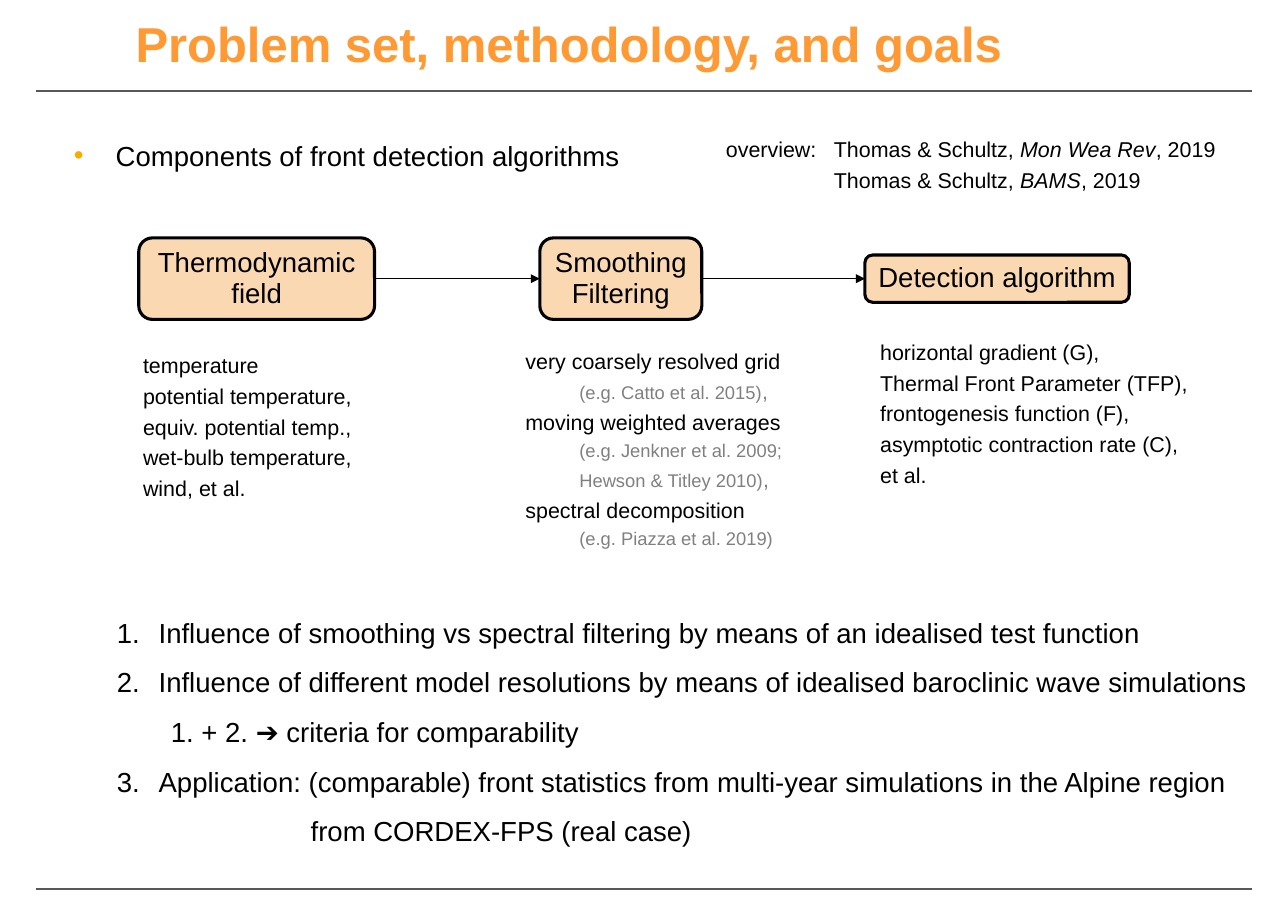
from lxml.etree import SubElement
from pptx import Presentation
from pptx.dml.color import RGBColor
from pptx.enum.shapes import MSO_CONNECTOR, MSO_SHAPE
from pptx.enum.text import MSO_ANCHOR, MSO_AUTO_SIZE, PP_ALIGN
from pptx.oxml.ns import qn
from pptx.util import Inches, Pt

WIDTH, HEIGHT = 11.69, 8.27
AXIS = 2.53  # height of the flow arrows
TAB = 0.49
INK, ORANGE, GREY, RULE = "000000", "FF9933", "808080", "58585A"

TITLE = "Problem set, methodology, and goals"
# Each line is (layout of the line, run, run, ...); a run is text or (text, look).
TOPIC = [("bullet", "Components of front detection algorithms")]
OVERVIEW = [
    ("label", "overview:\tThomas & Schultz, ", ("Mon Wea Rev", "italic"), ", 2019"),
    ("under label", "Thomas & Schultz, ", ("BAMS", "italic"), ", 2019"),
]
STEPS = [  # text, left, width, height
    ("Thermodynamic\vfield", 1.26, 2.14, 0.74),
    ("Smoothing\vFiltering", 4.9, 1.47, 0.74),
    ("Detection algorithm", 7.85, 2.4, 0.43),
]
FIELDS = [
    ("plain", "temperature"),
    ("plain", "potential temperature,"),
    ("plain", "equiv. potential temp.,"),
    ("plain", "wet-bulb temperature,"),
    ("plain", "wind, et al."),
]
FILTERS = [
    ("plain", "very coarsely resolved grid"),
    ("tabbed", ("(e.g. Catto et al. 2015)", "source"), (",", "grey")),
    ("plain", "moving weighted averages"),
    ("tabbed", ("(e.g. Jenkner et al. 2009;", "source")),
    ("tabbed", ("Hewson & Titley 2010)", "source"), (",", "grey")),
    ("plain", "spectral decomposition"),
    ("tabbed", ("(e.g. Piazza et al. 2019)", "source")),
]
DETECTORS = [
    ("plain", "horizontal gradient (G),"),
    ("plain", "Thermal Front Parameter (TFP),"),
    ("plain", "frontogenesis function (F),"),
    ("plain", "asymptotic contraction rate (C),"),
    ("plain", "et al."),
]
GOALS = [
    ("number", "Influence of smoothing vs spectral filtering by means of an idealised test function"),
    ("number", "Influence of different model resolutions by means of idealised baroclinic wave simulations"),
    ("tabbed", "1. + 2. ➔ criteria for comparability"),
    ("number 3", "Application: (comparable) front statistics from multi-year simulations in the Alpine region"),
    ("continued", "from CORDEX-FPS (real case)"),
]
NOTES = [  # lines, left, top, width, height
    (OVERVIEW, 6.49, 1.14, 4.9, 0.64),
    (FIELDS, 1.2, 3.1, 2.4, 1.49),
    (FILTERS, 4.67, 3.06, 2.8, 2.01),
    (DETECTORS, 7.89, 2.98, 3.3, 1.49),
]

# Left margin, first-line indent, marker tag, marker attributes, marker colour
LINE_LAYOUTS = {
    "plain": (0, 0, "a:buNone", {}, None),
    "tabbed": (TAB, 0, "a:buNone", {}, None),
    "label": (2 * TAB, -2 * TAB, "a:buNone", {}, None),
    "under label": (2 * TAB, 0, "a:buNone", {}, None),
    "continued": (1.76, 0, "a:buNone", {}, None),
    "bullet": (0.38, -0.38, "a:buChar", {"char": "•"}, "FAAB00"),
    "number": (0.38, -0.38, "a:buAutoNum", {"type": "arabicPeriod"}, INK),
    "number 3": (0.38, -0.38, "a:buAutoNum", {"type": "arabicPeriod", "startAt": "3"}, INK),
}


def color(hex_code):
    return RGBColor.from_string(hex_code)


def style(font, size, hex_code=INK, bold=False, italic=False):
    font.name, font.size, font.bold, font.italic = "Arial", Pt(size), bold, italic
    font.color.rgb = color(hex_code)


def place(shape, left, top, width, height):
    shape.left, shape.top = Inches(left), Inches(top)
    shape.width, shape.height = Inches(width), Inches(height)


def indent(paragraph, line_layout):
    margin, first, tag, attributes, marker_color = LINE_LAYOUTS[line_layout]
    properties = paragraph._p.get_or_add_pPr()
    properties.set("marL", str(Inches(margin)))
    properties.set("indent", str(Inches(first)))
    if marker_color:
        SubElement(SubElement(properties, qn("a:buClr")), qn("a:srgbClr"), val=marker_color)
        SubElement(properties, qn("a:buFont"), typeface="Arial")
    SubElement(properties, qn(tag), attributes)


def write(frame, lines, size, spacing):
    frame.word_wrap = True
    frame.auto_size = MSO_AUTO_SIZE.NONE
    frame.vertical_anchor = MSO_ANCHOR.TOP
    for number, (line_layout, *parts) in enumerate(lines):
        paragraph = frame.add_paragraph() if number else frame.paragraphs[0]
        paragraph.line_spacing = spacing
        paragraph.space_before = Pt(0)
        indent(paragraph, line_layout)
        for part in parts:
            text, look = (part, "") if isinstance(part, str) else part
            run = paragraph.add_run()
            run.text = text
            style(run.font, 12 if look == "source" else size,
                  GREY if look in ("source", "grey") else INK, italic=look == "italic")


def add_line(shapes, start, end, hex_code, points):
    line = shapes.add_connector(MSO_CONNECTOR.STRAIGHT, *map(Inches, start + end))
    line.line.color.rgb = color(hex_code)
    line.line.width = Pt(points)
    SubElement(line._element.spPr, qn("a:effectLst"))
    return line


def add_step(shapes, text, left, width, height):
    step = shapes.add_shape(MSO_SHAPE.ROUNDED_RECTANGLE, Inches(left),
                            Inches(AXIS - height / 2), Inches(width), Inches(height))
    step.shadow.inherit = False
    step.fill.solid()
    step.fill.fore_color.rgb = color("F08302")
    tint = step._element.spPr.find(qn("a:solidFill")).find(qn("a:srgbClr"))
    SubElement(tint, qn("a:alpha"), val="30000")
    step.line.color.rgb = color(INK)
    step.line.width = Pt(2)
    frame = step.text_frame
    frame.text = text
    frame.word_wrap = False
    frame.vertical_anchor = MSO_ANCHOR.MIDDLE
    paragraph = frame.paragraphs[0]
    paragraph.alignment, paragraph.line_spacing = PP_ALIGN.CENTER, 0.93
    for run in paragraph.runs:
        style(run.font, 18)
    return step


def add_arrow(shapes, before, after):
    arrow = add_line(shapes, (0, AXIS), (1, AXIS), INK, 0.75)
    arrow.begin_connect(before, 3)
    arrow.end_connect(after, 1)
    SubElement(arrow._element.spPr.find(qn("a:ln")), qn("a:tailEnd"), type="triangle")


def main():
    deck = Presentation()
    deck.slide_width, deck.slide_height = Inches(WIDTH), Inches(HEIGHT)
    slide = deck.slides.add_slide(deck.slide_layouts[3])
    shapes = slide.shapes
    title, topic, goals = slide.placeholders

    for height in (0.825, 8.07):
        add_line(shapes, (0.33, height), (WIDTH - 0.33, height), RULE, 1)

    place(title, 1.23, 0.06, 10.13, 0.71)
    frame = title.text_frame
    frame.text = TITLE
    frame.margin_left = frame.margin_right = frame.margin_top = frame.margin_bottom = 0
    frame.vertical_anchor = MSO_ANCHOR.MIDDLE
    heading = frame.paragraphs[0]
    heading.alignment, heading.line_spacing = PP_ALIGN.LEFT, 0.93
    style(heading.runs[0].font, 32, ORANGE, bold=True)

    place(topic, 0.57, 1.15, 5.9, 0.8)
    write(topic.text_frame, TOPIC, 18, 1.2)
    place(goals, 0.96, 5.39, 10.71, 2.32)
    write(goals.text_frame, GOALS, 18, 1.5)

    steps = [add_step(shapes, *step) for step in STEPS]
    for before, after in zip(steps, steps[1:]):
        add_arrow(shapes, before, after)

    for lines, *area in NOTES:
        note = shapes.add_textbox(*map(Inches, area))
        write(note.text_frame, lines, 14, 1.2)

    deck.save("out.pptx")


if __name__ == "__main__":
    main()
